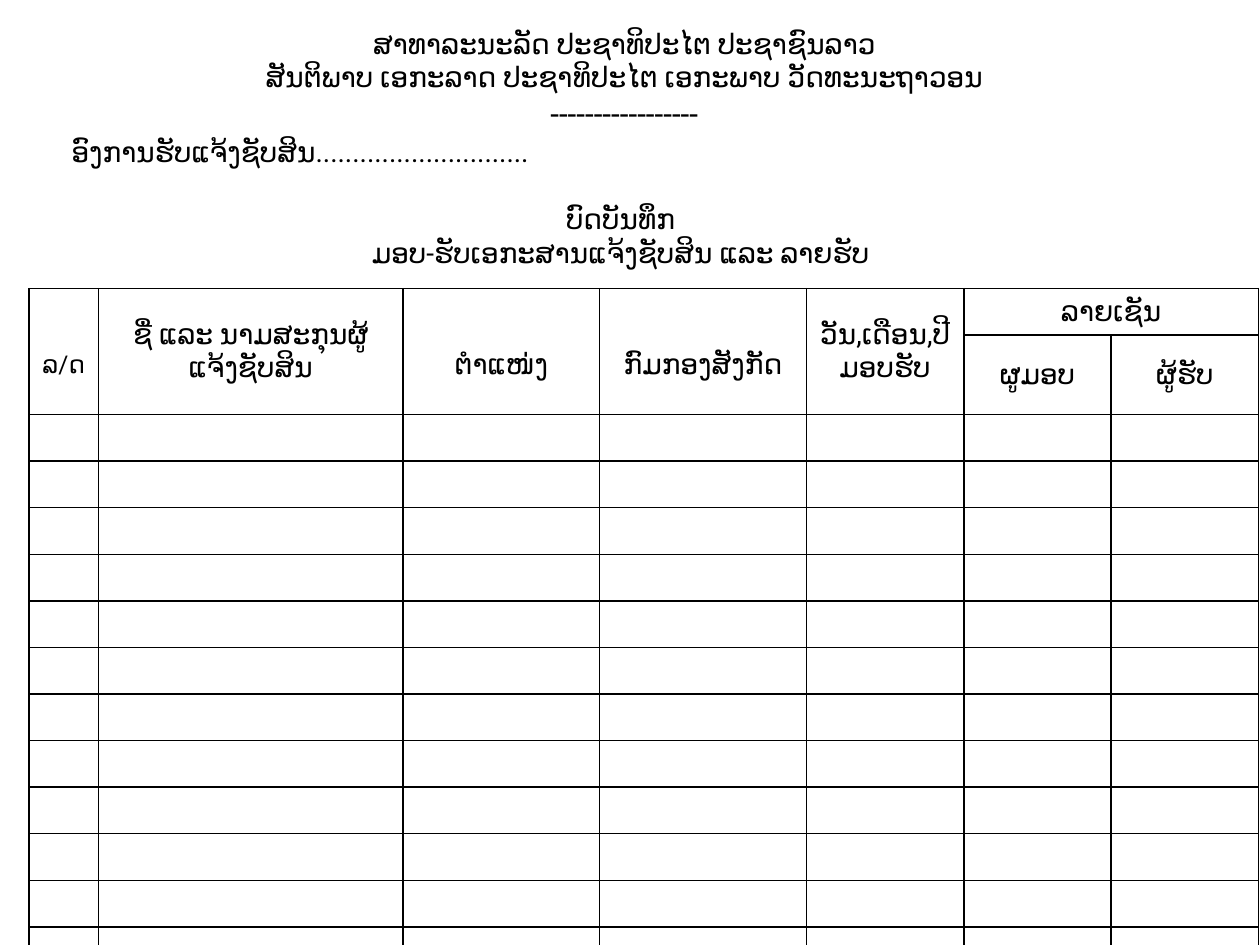
"""Build a one-page Lao form for the handover of asset declarations."""
import dataclasses

import lxml.etree
import pptx
import pptx.dml.color
import pptx.enum.text
import pptx.oxml.ns
import pptx.util

Inches = pptx.util.Inches
Pt = pptx.util.Pt
Align = pptx.enum.text.PP_ALIGN
qn = pptx.oxml.ns.qn


@dataclasses.dataclass(frozen=True)
class Theme:
    font: str = "Roboto"
    ink: str = "000000"
    small: int = 14
    body: int = 16
    rule: int = 18
    border: int = 1
    line_gap: int = 19


class FormPage:
    def __init__(self, deck, theme):
        self.theme = theme
        self.page = deck.slides.add_slide(deck.slide_layouts[6])

    def add_text(self, para, text, size, align=Align.CENTER):
        para.alignment = align
        for index, line in enumerate(text.split("\n")):
            if index:
                para.add_line_break()
            span = para.add_run()
            span.text = line
            span.font.size = Pt(size)
            span.font.name = self.theme.font
            span.font.color.rgb = pptx.dml.color.RGBColor.from_string(self.theme.ink)
            properties = span._r.get_or_add_rPr()
            lxml.etree.SubElement(properties, qn("a:cs"), typeface=self.theme.font)

    def text_box(self, left, top, width, height, lines):
        box = self.page.shapes.add_textbox(
            Inches(left), Inches(top), Inches(width), Inches(height))
        frame = box.text_frame
        frame.word_wrap = True
        frame.auto_size = pptx.enum.text.MSO_AUTO_SIZE.SHAPE_TO_FIT_TEXT
        for index, (text, size, align, gap) in enumerate(lines):
            para = frame.add_paragraph() if index else frame.paragraphs[0]
            if gap:
                para.space_before = Pt(gap)
            self.add_text(para, text, size, align)

    def outline(self, cell):
        properties = cell._tc.get_or_add_tcPr()
        for position, side in enumerate(("lnL", "lnR", "lnT", "lnB")):
            line = lxml.etree.Element(qn(f"a:{side}"), w=str(Pt(self.theme.border)))
            fill = lxml.etree.SubElement(line, qn("a:solidFill"))
            lxml.etree.SubElement(fill, qn("a:srgbClr"), val=self.theme.ink)
            properties.insert(position, line)

    def table(self, left, top, widths, heights, headings):
        table = self.page.shapes.add_table(
            len(heights), len(widths), Inches(left), Inches(top),
            Inches(sum(widths)), Inches(sum(heights))).table
        table.first_row = table.horz_banding = False
        for column, width in zip(table.columns, widths):
            column.width = Inches(width)
        for row, height in zip(table.rows, heights):
            row.height = Inches(height)
        for cell in table.iter_cells():
            cell.fill.background()
            cell.margin_top = cell.margin_bottom = Inches(0.03)
            cell.vertical_anchor = pptx.enum.text.MSO_ANCHOR.MIDDLE
            self.outline(cell)
        for row, column, rows, columns, text, size, drop in headings:
            cell = table.cell(row, column)
            if rows * columns > 1:
                cell.merge(table.cell(row + rows - 1, column + columns - 1))
            cell.margin_top = Inches(0.03 + drop)
            self.add_text(cell.text_frame.paragraphs[0], text, size)


def main():
    deck = pptx.Presentation()
    deck.slide_width, deck.slide_height = Inches(10), Inches(7.5)
    theme = Theme()
    form = FormPage(deck, theme)
    form.text_box(0.23, 0.16, 9.45, 1.25, [
        ("ສາທາລະນະລັດ ປະຊາທິປະໄຕ ປະຊາຊົນລາວ", theme.body, Align.CENTER, 0),
        ("ສັນຕິພາບ ເອກະລາດ ປະຊາທິປະໄຕ ເອກະພາບ ວັດທະນະຖາວອນ",
         theme.body, Align.CENTER, 0),
        ("-" * 17, theme.rule, Align.CENTER, 0),
    ])
    form.table(
        0.23, 2.29, [0.55, 2.42, 1.56, 1.64, 1.25, 1.17, 1.17],
        [0.37, 0.63] + [0.37] * 12, [
            (0, 0, 2, 1, "ລ/ດ", theme.small, 0.22),
            (0, 1, 2, 1, "ຊື່ ແລະ ນາມສະກຸນຜູ້\nແຈ້ງຊັບສິນ", theme.body, 0),
            (0, 2, 2, 1, "ຕຳແໜ່ງ", theme.body, 0.22),
            (0, 3, 2, 1, "ກົມກອງສັງກັດ", theme.body, 0.22),
            (0, 4, 2, 1, "ວັນ,ເດືອນ,ປີ ມອບຮັບ", theme.body, 0),
            (0, 5, 1, 2, "ລາຍເຊັນ", theme.body, 0),
            (1, 5, 1, 1, "ຜູມອບ", theme.body, 0),
            (1, 6, 1, 1, "ຜູ້ຮັບ", theme.body, 0),
        ])
    form.text_box(0.47, 1.02, 8.91, 1.18, [
        ("ອົງການຮັບແຈ້ງຊັບສິນ" + "." * 29, theme.body, Align.LEFT, 0),
        ("ບົດບັນທຶກ", theme.body, Align.CENTER, theme.line_gap),
        ("ມອບ-ຮັບເອກະສານແຈ້ງຊັບສິນ ແລະ ລາຍຮັບ", theme.body, Align.CENTER, 0),
    ])
    deck.save("out.pptx")


if __name__ == "__main__":
    main()
